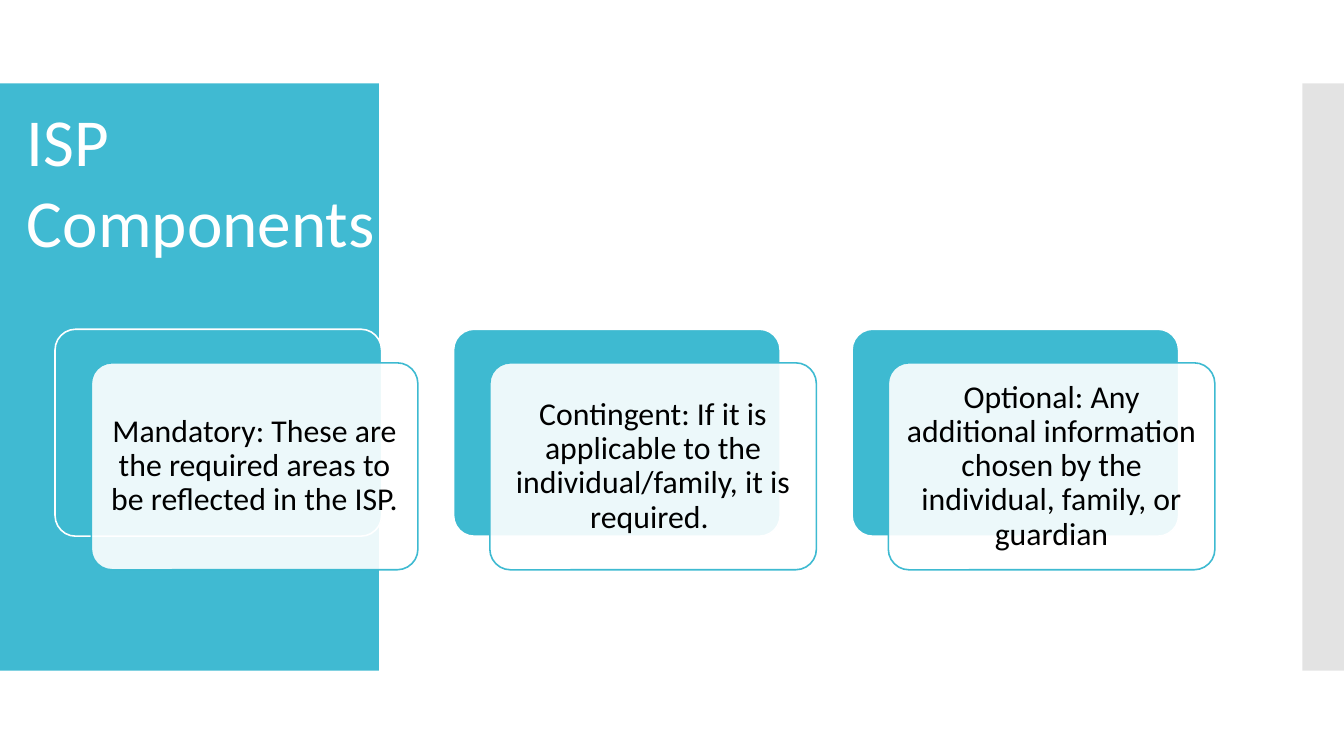
from lxml import etree
from pptx import Presentation
from pptx.dml.color import RGBColor
from pptx.enum.shapes import MSO_SHAPE as Shape
from pptx.enum.text import MSO_ANCHOR as Anchor, MSO_AUTO_SIZE as AutoSize, PP_ALIGN as Align
from pptx.oxml.ns import qn
from pptx.util import Inches, Pt

COLORS = {
    "panel": "40BAD2",
    "card": "3EBAD1",
    "edge": "C8C8C8",
    "white": "FFFFFF",
    "black": "000000",
}
FONT = "Calibri"
SLIDE_WIDTH = 10
SLIDE_HEIGHT = SLIDE_WIDTH * 9 / 16

COMPONENTS = [
    "Mandatory: These are the required areas to be reflected in the ISP.",
    "Contingent: If it is applicable to the individual/family, it is required. ",
    "Optional: Any additional information chosen by the individual, family, or guardian",
]


def rgb(name):
    return RGBColor.from_string(COLORS[name])


def add_box(slide, kind, left, top, width, height, fill, opacity=100, line=None):
    shape = slide.shapes.add_shape(
        kind, Inches(left), Inches(top), Inches(width), Inches(height))
    shape.shadow.inherit = False
    shape.fill.solid()
    shape.fill.fore_color.rgb = rgb(fill)
    if opacity < 100:
        color = shape.element.spPr.find(qn("a:solidFill"))[0]
        etree.SubElement(color, qn("a:alpha"), val=str(opacity * 1000))
    if line:
        shape.line.color.rgb = rgb(line)
        shape.line.width = Pt(0.85)
    else:
        shape.line.fill.background()
    return shape


def set_text(shape, text, size, color, align=Align.LEFT, anchor=Anchor.MIDDLE,
             inset=0.1, spacing=1.0):
    frame = shape.text_frame
    frame.text = text
    frame.word_wrap = True
    frame.auto_size = AutoSize.NONE
    frame.vertical_anchor = anchor
    frame.margin_left = frame.margin_right = Inches(inset)
    frame.margin_top = frame.margin_bottom = Inches(inset)
    paragraph = frame.paragraphs[0]
    paragraph.alignment = align
    paragraph.line_spacing = spacing
    paragraph.space_before = Pt(0)
    for run in paragraph.runs:
        run.font.name = FONT
        run.font.size = Pt(size)
        run.font.color.rgb = rgb(color)


def add_side_panels(slide, top, height):
    add_box(slide, Shape.RECTANGLE, 0, top, 2.82, height, "panel")
    add_box(slide, Shape.RECTANGLE, 9.69, top, 0.31, height, "edge", opacity=50)


def place_title(slide, left, top, width, height):
    title = slide.shapes.title
    title.left, title.top = Inches(left), Inches(top)
    title.width, title.height = Inches(width), Inches(height)
    set_text(title, "ISP \vComponents", 36, "white", anchor=Anchor.BOTTOM)
    # Bring the title in front of the side panels
    slide.shapes.element.append(title.element)


def add_card(slide, left, top, width, height, text):
    """Solid card with a translucent text card offset over it."""
    back = add_box(slide, Shape.ROUNDED_RECTANGLE, left, top, width, height,
                   "card", line="white")
    front = add_box(slide, Shape.ROUNDED_RECTANGLE, left + 0.27, top + 0.25,
                    width, height, "white", opacity=90, line="card")
    for shape in (back, front):
        shape.adjustments[0] = 0.1
    set_text(front, text, 17, "black", align=Align.CENTER, inset=0.07, spacing=0.9)


def add_cards(slide, left, top, width, height):
    """Spread the cards evenly across the given width."""
    card_width, offset = 2.43, 0.27
    pitch = (width - card_width - offset) / (len(COMPONENTS) - 1)
    for index, text in enumerate(COMPONENTS):
        add_card(slide, left + index * pitch, top, card_width, height, text)


def main():
    presentation = Presentation()
    presentation.slide_width = Inches(SLIDE_WIDTH)
    presentation.slide_height = Inches(SLIDE_HEIGHT)
    slide = presentation.slides.add_slide(presentation.slide_layouts[5])
    slide.background.fill.solid()
    slide.background.fill.fore_color.rgb = rgb("white")

    add_side_panels(slide, 0.62, 4.37)
    place_title(slide, 0.1, 1.29, 9.21, 0.75)
    add_cards(slide, 0.41, 2.45, 8.63, 1.54)
    presentation.save("out.pptx")


if __name__ == "__main__":
    main()
